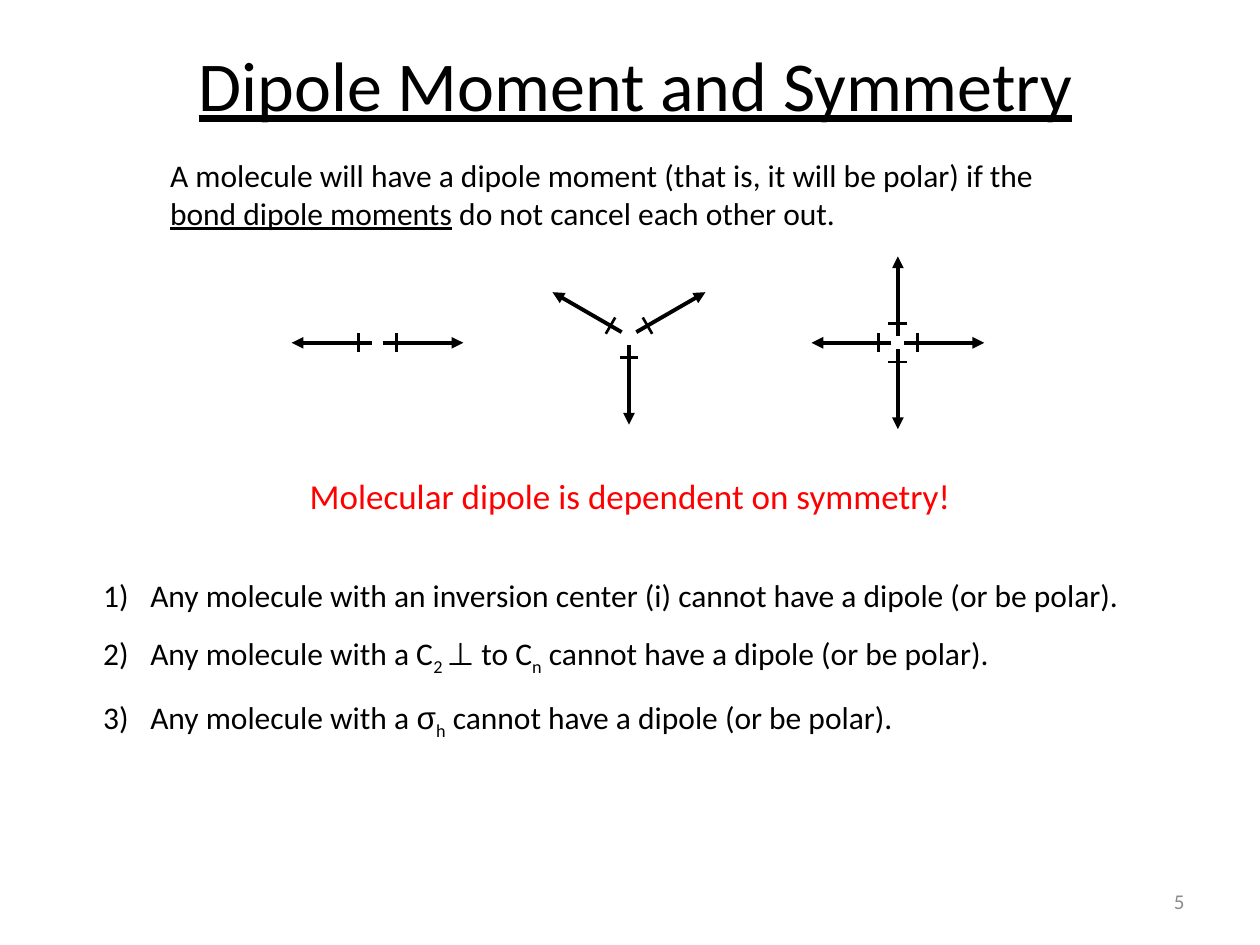
from math import cos, radians, sin

from pptx import Presentation
from pptx.dml.color import RGBColor
from pptx.enum.shapes import MSO_CONNECTOR
from pptx.enum.text import MSO_ANCHOR, MSO_AUTO_SIZE, PP_ALIGN
from pptx.oxml.ns import qn
from pptx.util import Cm, Pt
from lxml.etree import SubElement

BLACK = RGBColor(0x00, 0x00, 0x00)
RED = RGBColor(0xFF, 0x00, 0x00)
GRAY = RGBColor(0x8C, 0x8C, 0x8C)

prs = Presentation()
prs.slide_width, prs.slide_height = Cm(25.4), Cm(19.05)
slide = prs.slides.add_slide(prs.slide_layouts[5])


def add_run(paragraph, text, size, color=BLACK, font="Calibri"):
    run = paragraph.add_run()
    run.text = text
    run.font.size = Pt(size)
    run.font.name = font
    run.font.color.rgb = color
    return run


def add_line(x1, y1, x2, y2, width):
    line = slide.shapes.add_connector(
        MSO_CONNECTOR.STRAIGHT, Cm(x1), Cm(y1), Cm(x2), Cm(y2))
    line.line.color.rgb = BLACK
    line.line.width = Pt(width)
    SubElement(line._element.spPr, qn("a:effectLst"))
    return line


# Title
title = slide.shapes.title
title.left, title.top, title.width, title.height = Cm(1.57), Cm(0.71), Cm(22.48), Cm(1.96)
title.text_frame.auto_size = MSO_AUTO_SIZE.NONE
title.text_frame.vertical_anchor = MSO_ANCHOR.TOP
heading = title.text_frame.paragraphs[0]
heading.alignment = PP_ALIGN.CENTER
add_run(heading, "Dipole Moment and Symmetry", 40).font.underline = True

# Text boxes: definition, conclusion, rules, page number
frames = []
for left, top, width, height in [(3.18, 3.02, 19.05, 1.8), (3.18, 9.45, 19.05, 1.12),
                                 (1.83, 11.48, 21.67, 3.43), (18.2, 17.65, 5.93, 1.02)]:
    frame = slide.shapes.add_textbox(Cm(left), Cm(top), Cm(width), Cm(height)).text_frame
    frame.word_wrap = True
    frames.append(frame)
definition, conclusion, rules, page_number = frames

sentence = definition.paragraphs[0]
add_run(sentence, "A molecule will have a dipole moment (that is, it will be polar) if the ", 18)
add_run(sentence, "bond dipole moments", 18).font.underline = True
add_run(sentence, " do not cancel each other out.", 18)

conclusion.paragraphs[0].alignment = PP_ALIGN.CENTER
add_run(conclusion.paragraphs[0], "Molecular dipole is dependent on symmetry!", 20, RED)

page_number.vertical_anchor = MSO_ANCHOR.MIDDLE
page_number.paragraphs[0].alignment = PP_ALIGN.RIGHT
add_run(page_number.paragraphs[0], "5", 12, GRAY)

# Bond dipoles: center x, center y, gap at the center, arrow directions
ARROW_LENGTH, BAR_DISTANCE, BAR_HALF = 1.61, 0.26, 0.19
arrangements = [
    (7.61, 6.91, 0.12, (0, 180)),
    (12.68, 6.78, 0.17, (90, 210, 330)),
    (18.1, 6.91, 0.13, (0, 90, 180, 270)),
]
for center_x, center_y, gap, directions in arrangements:
    for direction in directions:
        dx, dy = cos(radians(direction)), sin(radians(direction))
        tip = gap + ARROW_LENGTH
        arrow = add_line(center_x + gap * dx, center_y + gap * dy,
                         center_x + tip * dx, center_y + tip * dy, 2.25)
        SubElement(arrow.line._get_or_add_ln(), qn("a:tailEnd"), type="triangle")
        bar_x = center_x + (gap + BAR_DISTANCE) * dx
        bar_y = center_y + (gap + BAR_DISTANCE) * dy
        add_line(bar_x - BAR_HALF * dy, bar_y + BAR_HALF * dx,
                 bar_x + BAR_HALF * dy, bar_y - BAR_HALF * dx, 1.5)

# Numbered rules: (text, font, is subscript)
ENDING = " cannot have a dipole (or be polar)."
rule_runs = [
    [("Any molecule with an inversion center (i)" + ENDING, "Calibri", False)],
    [("Any molecule with a C", "Calibri", False), ("2 ", "Calibri", True),
     ("⊥ to C", "Calibri", False), ("n", "Calibri", True), (ENDING, "Calibri", False)],
    [("Any molecule with a ", "Calibri", False), ("σ", "Arial", False),
     ("h", "Calibri", True), (ENDING, "Calibri", False)],
]
for index, parts in enumerate(rule_runs):
    rule = rules.add_paragraph() if index else rules.paragraphs[0]
    rule.space_after = Pt(12)
    properties = rule._p.get_or_add_pPr()
    properties.set("marL", str(Cm(0.95)))
    properties.set("indent", str(-Cm(0.95)))
    SubElement(properties, qn("a:buFont"), typeface="+mj-lt")
    SubElement(properties, qn("a:buAutoNum"), type="arabicParenR")
    for text, font, is_subscript in parts:
        run = add_run(rule, text, 18, font=font)
        if is_subscript:
            run.font._element.set("baseline", "-25000")

prs.save("out.pptx")
